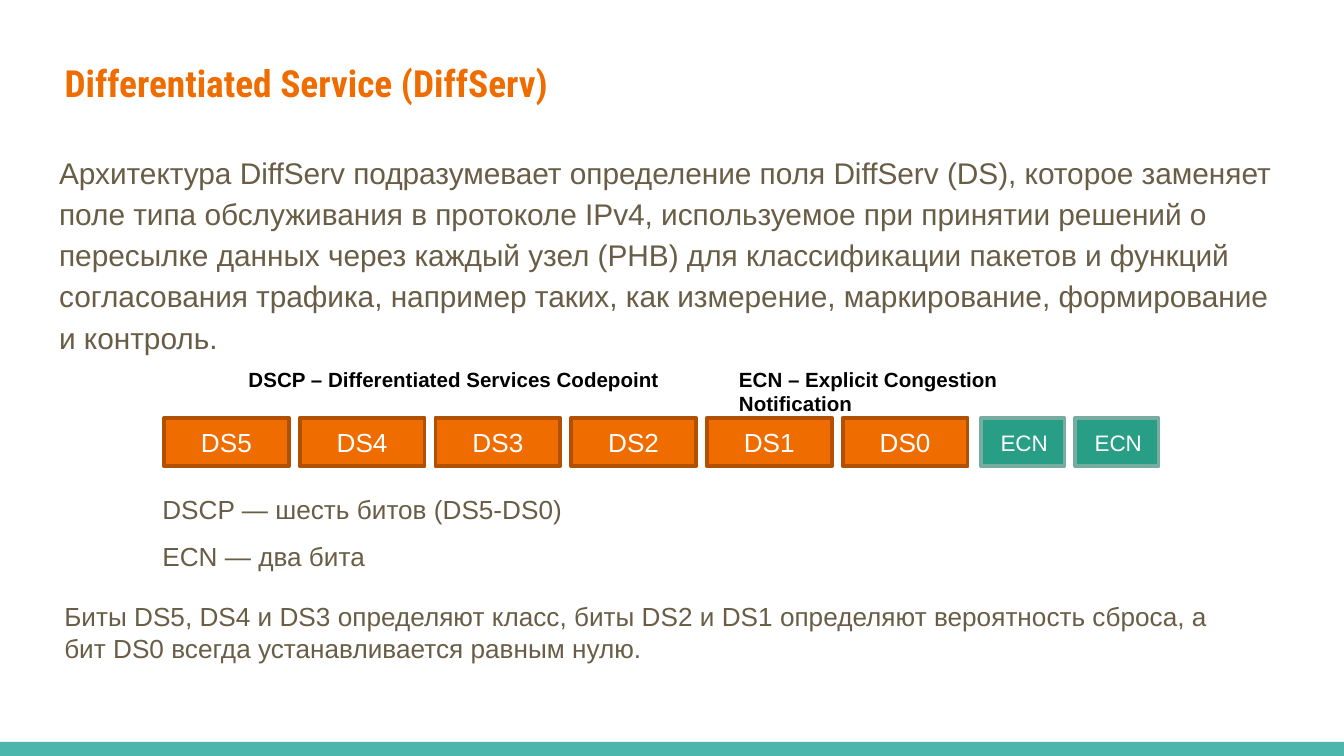
from lxml import etree
from pptx import Presentation
from pptx import util as u
from pptx.dml.color import RGBColor
from pptx.enum import shapes, text
from pptx.oxml import ns

COLORS = {
    "orange": "EF6C00", "orange_line": "B15000",
    "green": "279E85", "green_line": "77ACA1",
    "teal": "4DB6AC", "brown": "695D46",
    "black": "000000", "white": "FFFFFF",
}


def color(name):
    return RGBColor.from_string(COLORS[name])


def write(box, content, size, ink, name="Arial", bold=False, frame_format=None, para_format=None):
    """Put one formatted paragraph into a shape."""
    frame = box.text_frame
    for key, value in (frame_format or {}).items():
        setattr(frame, key, value)
    para = frame.paragraphs[0]
    for key, value in (para_format or {}).items():
        setattr(para, key, value)
    span = para.add_run()
    span.text = content
    for key, value in {"size": u.Pt(size), "name": name, "bold": bold}.items():
        setattr(span.font, key, value)
    span.font.color.rgb = color(ink)
    return para


# Widescreen page, 16 to 9
deck = Presentation()
deck.slide_width = u.Inches(10)
deck.slide_height = u.Inches(10 * 9 / 16)
page = deck.slides.add_slide(deck.slide_layouts[1])

# Bottom band
band = page.shapes.add_shape(shapes.MSO_SHAPE.RECTANGLE,
                             u.Inches(0), u.Inches(5.52), u.Inches(10), u.Inches(0.11))
band.shadow.inherit = False
band.fill.solid()
band.fill.fore_color.rgb = color("teal")
band.line.fill.background()

# Title and body
title, body = page.shapes.title, page.placeholders[1]
for box, place in ((title, (0.38, 0.35, 8.61, 0.52)), (body, (0.34, 1.01, 9.32, 1.67))):
    box.left, box.top, box.width, box.height = map(u.Inches, place)

margins = ("margin_left", "margin_top", "margin_right", "margin_bottom")
placeholder_frame = {
    **dict.fromkeys(margins, u.Inches(0.1)),
    "word_wrap": True,
    "auto_size": text.MSO_AUTO_SIZE.NONE,
    "vertical_anchor": text.MSO_ANCHOR.TOP,
}
write(title, "Differentiated Service (DiffServ)", 20, "orange", "Roboto Condensed", True,
      placeholder_frame, {"alignment": text.PP_ALIGN.LEFT})
para = write(
    body,
    "Архитектура DiffServ подразумевает определение поля DiffServ (DS), которое заменяет "
    "поле типа обслуживания в протоколе IPv4, используемое при принятии решений о "
    "пересылке данных через каждый узел (PHB) для классификации пакетов и функций "
    "согласования трафика, например таких, как измерение, маркирование, формирование "
    "и контроль.",
    16, "brown", frame_format=placeholder_frame,
    para_format={"line_spacing": 1.15, "space_before": u.Pt(0), "space_after": u.Pt(16)})
properties = para._p.get_or_add_pPr()
properties.set("marL", "0")
properties.set("indent", "0")
etree.SubElement(properties, ns.qn("a:buNone"))

# Bit fields: six DSCP bits, then two ECN bits
bits = [(f"DS{5 - i}", 1.22 + 1.01 * i, 0.93, 14, "orange", 0.1) for i in range(6)]
bits += [("ECN", 7.3 + 0.7 * i, 0.62, 12, "green", 0.12) for i in range(2)]
for label, left, width, size, fill, margin in bits:
    box = page.shapes.add_shape(shapes.MSO_SHAPE.RECTANGLE, u.Inches(left), u.Inches(3.11),
                                u.Inches(width), u.Inches(0.36))
    box.shadow.inherit = False
    box.fill.solid()
    box.fill.fore_color.rgb = color(fill)
    box.line.color.rgb = color(fill + "_line")
    box.line.width = u.Pt(2)
    write(box, label, size, "white",
          frame_format={"margin_left": u.Inches(margin),
                        "vertical_anchor": text.MSO_ANCHOR.MIDDLE},
          para_format={"alignment": text.PP_ALIGN.CENTER})

# Captions above the fields and notes below them
captions = [
    ("DSCP – Differentiated Services Codepoint", (1.75, 2.68, 4.05, 0.29), 11, "black", True, True),
    ("ECN – Explicit Congestion Notification", (5.4, 2.68, 3, 0.29), 11, "black", True, True),
    ("DSCP — шесть битов (DS5-DS0)", (1.11, 3.62, 3.2, 0.34), 14, "brown", False, False),
    ("ECN — два бита", (1.11, 3.97, 1.73, 0.34), 14, "brown", False, False),
    ("Биты DS5, DS4 и DS3 определяют класс, биты DS2 и DS1 определяют вероятность сброса, "
     "а бит DS0 всегда устанавливается равным нулю.",
     (0.38, 4.42, 8.91, 0.57), 14, "brown", False, True),
]
for content, place, size, ink, bold, wrap in captions:
    box = page.shapes.add_textbox(*map(u.Inches, place))
    write(box, content, size, ink, bold=bold,
          frame_format={"word_wrap": wrap, "auto_size": text.MSO_AUTO_SIZE.SHAPE_TO_FIT_TEXT})

deck.save("out.pptx")
